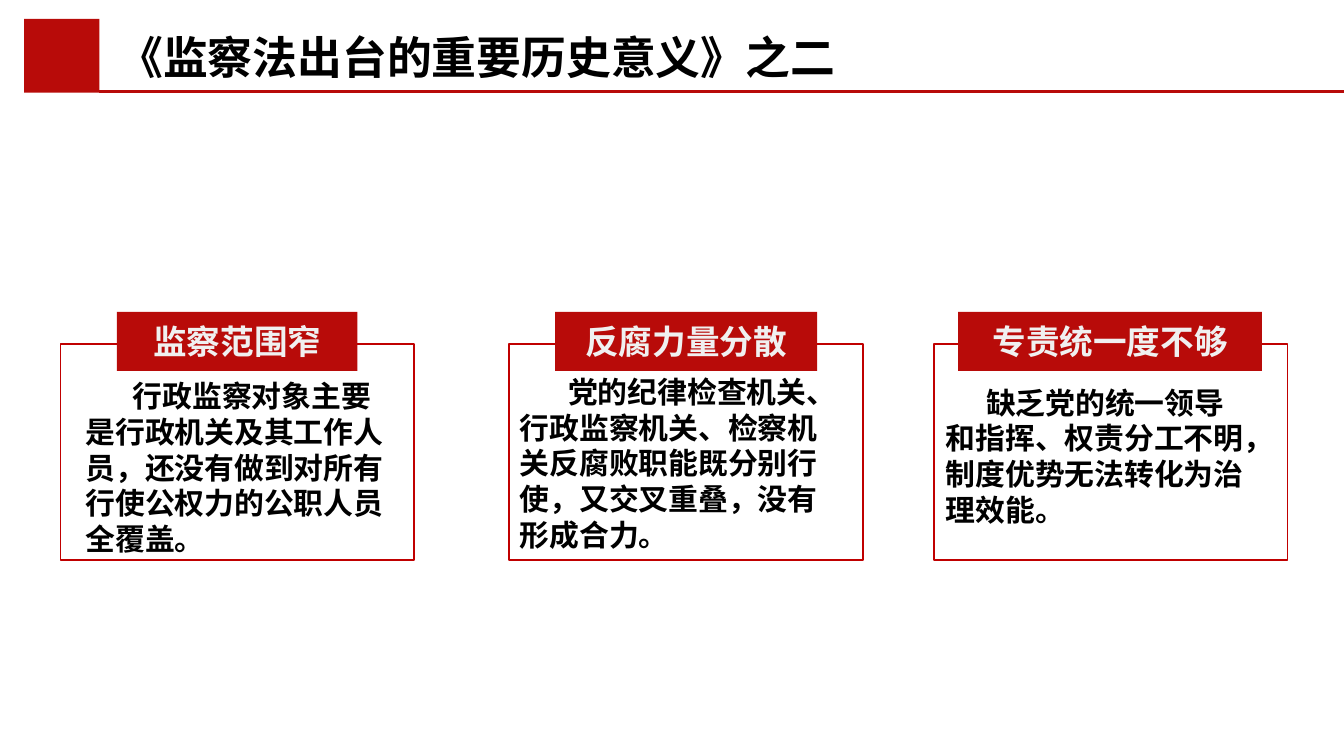
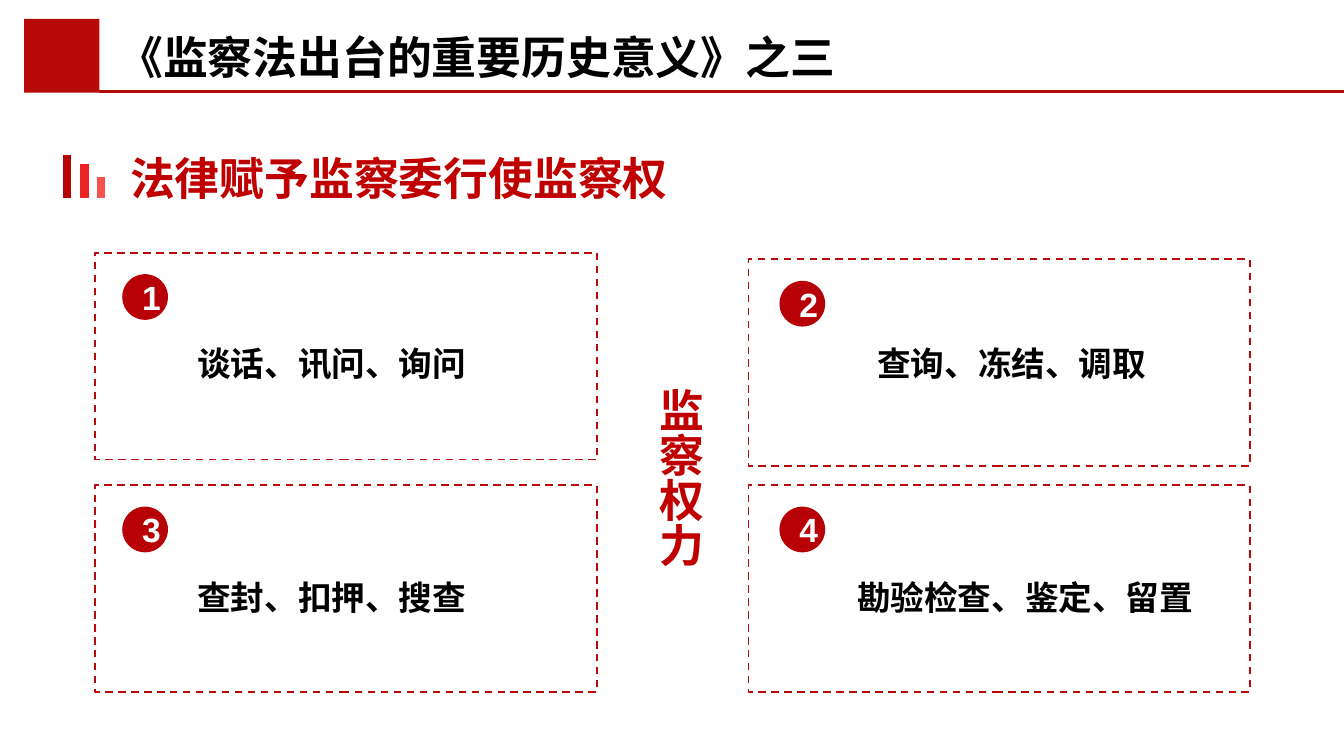
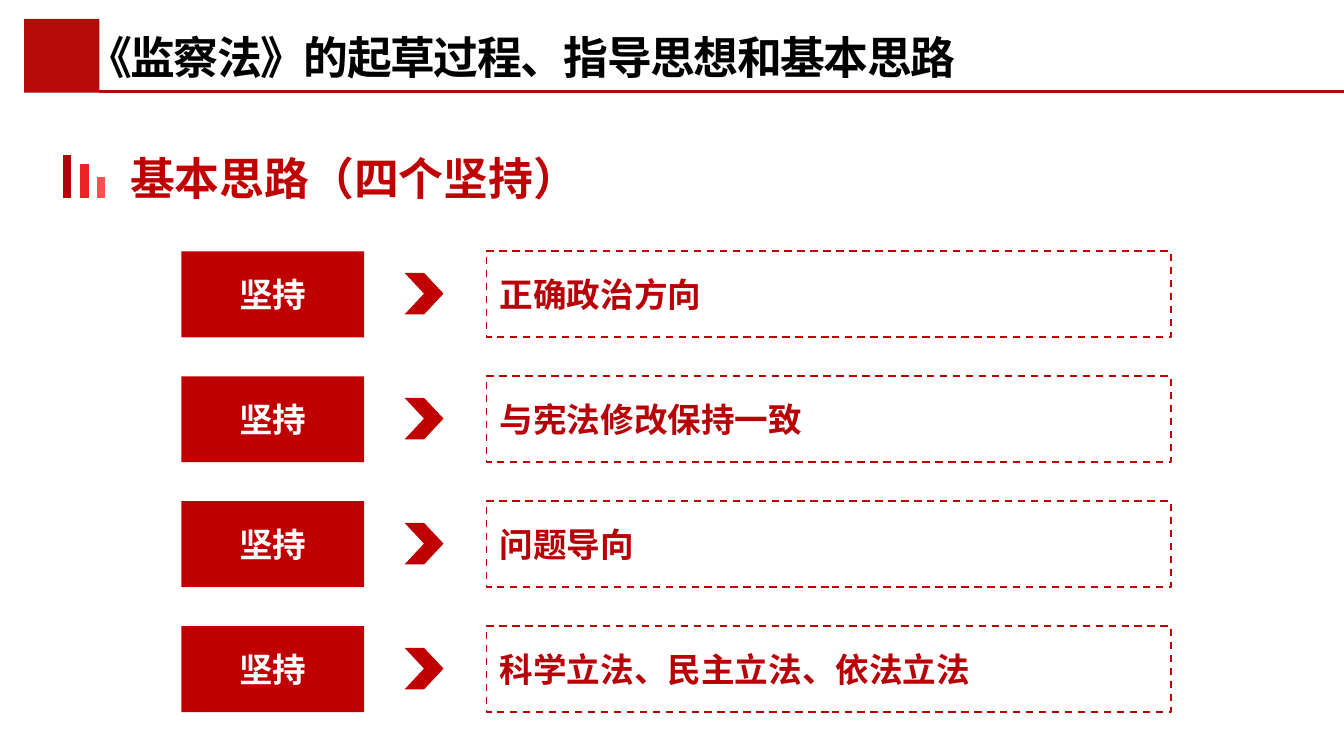
from pptx import Presentation
from pptx.dml.color import RGBColor
from pptx.enum.dml import MSO_LINE_DASH_STYLE as Dash
from pptx.enum.shapes import MSO_CONNECTOR, MSO_SHAPE as Shape
from pptx.enum.text import MSO_ANCHOR as Anchor, MSO_AUTO_SIZE as AutoSize, PP_ALIGN as Align
from pptx.oxml.ns import qn
from pptx.util import Inches, Pt

BAND_RED = RGBColor(0xB8, 0x0B, 0x09)
DEEP_RED = RGBColor(0xB8, 0x01, 0x06)
MID_RED = RGBColor(0xEE, 0x22, 0x22)
LIGHT_RED = RGBColor(0xF6, 0x50, 0x50)
ACCENT_RED = RGBColor(0xC0, 0x00, 0x00)
BLACK = RGBColor(0, 0, 0)
WHITE = RGBColor(0xFF, 0xFF, 0xFF)
PALE = RGBColor(0xF0, 0xF0, 0xF0)
CJK_FONT = "Noto Sans CJK SC"
LATIN_FONT = "Arial"

CARDS = [
    # frame left, label left, label width, body left, body top, indent
    ("监察范围窄",
     "行政监察对象主要是行政机关及其工作人员，还没有做到对所有行使公权力的公职人员全覆盖。",
     0.45, 0.87, 1.79, 0.46, 2.76, 0.35),
    ("反腐力量分散",
     "党的纪律检查机关、行政监察机关、检察机关反腐败职能既分别行使，又交叉重叠，没有形成合力。",
     3.79, 4.13, 1.95, 3.69, 2.73, 0.36),
    ("专责统一度不够",
     "缺乏党的统一领导和指挥、权责分工不明，制度优势无法转化为治理效能。",
     6.95, 7.13, 2.26, 6.86, 2.81, 0.3),
]
POWERS = [
    # frame left and top, circle offset, text left and top
    ("谈话、讯问、询问", 0.71, 1.88, 0.2, 1.37, 2.5),
    ("查询、冻结、调取", 5.57, 1.93, 0.23, 6.43, 2.5),
    ("查封、扣押、搜查", 0.71, 3.61, 0.2, 1.37, 4.24),
    ("勘验检查、鉴定、留置", 5.57, 3.61, 0.23, 6.28, 4.24),
]
PRINCIPLES = ["正确政治方向", "与宪法修改保持一致", "问题导向", "科学立法、民主立法、依法立法"]


def write(frame, text, size, color, align=Align.LEFT, font=CJK_FONT):
    """Write one bold paragraph and return it."""
    paragraph = frame.paragraphs[0]
    paragraph.alignment = align
    run = paragraph.add_run()
    run.text = text
    run.font.size = Pt(size)
    run.font.bold = True
    run.font.name = font
    run.font.color.rgb = color
    if font == CJK_FONT:
        paragraph.line_spacing = Pt(size * 1.2)
        latin = run.font._element.find(qn("a:latin"))
        east_asian = latin.makeelement(qn("a:ea"), {"typeface": font})
        latin.addnext(east_asian)
    return paragraph


def add_text(slide, text, left, top, width, height, size, color):
    box = slide.shapes.add_textbox(Inches(left), Inches(top), Inches(width), Inches(height))
    box.text_frame.word_wrap = True
    write(box.text_frame, text, size, color)
    return box


def add_block(slide, kind, left, top, width, height, fill=None, line=None, dashed=False):
    block = slide.shapes.add_shape(kind, Inches(left), Inches(top), Inches(width), Inches(height))
    block.shadow.inherit = False
    if fill is None:
        block.fill.background()
    else:
        block.fill.solid()
        block.fill.fore_color.rgb = fill
    if line is None:
        block.line.fill.background()
    else:
        block.line.color.rgb = line
        block.line.width = Pt(1)
        if dashed:
            block.line.dash_style = Dash.DASH
    block.text_frame.vertical_anchor = Anchor.MIDDLE
    return block


def add_line(slide, x1, y1, x2, y2, color, weight):
    line = slide.shapes.add_connector(
        MSO_CONNECTOR.STRAIGHT, Inches(x1), Inches(y1), Inches(x2), Inches(y2))
    line.line.color.rgb = color
    line.line.width = Pt(weight)
    properties = line.element.spPr
    properties.append(properties.makeelement(qn("a:effectLst"), {}))
    return line


def move_header_to_layout(slide):
    """Draw the red header band once, on the layout that all slides share."""
    square = add_block(slide, Shape.RECTANGLE, 0.18, 0.14, 0.56, 0.55, BAND_RED)
    rule = add_line(slide, 0.74, 0.68, 10, 0.68, BAND_RED, 1.5)
    for part in (rule, square):
        slide.slide_layout.shapes.element.insert(2, part.element)


def add_title(slide, text, left=0.78, width=5.59, inset=0.1, spacing=None):
    title = slide.shapes.title
    title.left, title.top = Inches(left), Inches(0.17)
    title.width, title.height = Inches(width), Inches(0.5)
    frame = title.text_frame
    frame.auto_size = AutoSize.NONE
    frame.word_wrap = True
    frame.vertical_anchor = Anchor.TOP
    frame.margin_left = Inches(inset)
    paragraph = write(frame, text, 24, BLACK)
    if spacing is not None:
        paragraph.runs[0].font._element.set("spc", str(round(spacing * 100)))


def add_subtitle(slide, text, width):
    add_text(slide, text, 0.87, 1.07, width, 0.5, 24, ACCENT_RED)
    for x, top, color in ((0.5, 1.15, DEEP_RED), (0.63, 1.22, MID_RED), (0.75, 1.32, LIGHT_RED)):
        add_line(slide, x, 1.47, x, top, color, 4.5)


def add_card(slide, heading, body, frame_left, label_left, label_width,
             body_left, body_top, indent):
    add_block(slide, Shape.RECTANGLE, frame_left, 2.56, 2.63, 1.61, WHITE, ACCENT_RED)
    label = add_block(slide, Shape.RECTANGLE, label_left, 2.32, label_width, 0.44, BAND_RED)
    write(label.text_frame, heading, 18, PALE, Align.CENTER)
    text = add_text(slide, body, body_left, body_top, 2.53, 1.45, 16, BLACK)
    properties = text.text_frame.paragraphs[0]._p.get_or_add_pPr()
    properties.set("marL", str(Inches(0.08)))
    properties.set("indent", str(Inches(indent)))


def add_power(slide, number, text, left, top, circle_offset, text_left, text_top):
    add_block(slide, Shape.RECTANGLE, left, top, 3.73, 1.54, line=BAND_RED, dashed=True)
    circle = add_block(slide, Shape.OVAL, left + circle_offset, top + 0.16, 0.34, 0.34, DEEP_RED)
    write(circle.text_frame, str(number), 18, WHITE, Align.CENTER, LATIN_FONT)
    add_text(slide, text, text_left, text_top, 2.7, 0.4, 18, BLACK)


def add_vertical_heading(slide, text):
    heading = add_text(slide, text, 4.7, 2.79, 0.61, 1.45, 24, ACCENT_RED)
    heading.text_frame.margin_bottom = 0
    heading.element.txBody.find(qn("a:bodyPr")).set("vert", "eaVert")


def add_principle(slide, text, top):
    keep = add_block(slide, Shape.RECTANGLE, 1.35, top, 1.36, 0.64, ACCENT_RED)
    write(keep.text_frame, "坚持", 18, WHITE, Align.CENTER)
    add_block(slide, Shape.CHEVRON, 3.01, top + 0.16, 0.29, 0.31, ACCENT_RED)
    principle = add_block(slide, Shape.RECTANGLE, 3.62, top, 5.09, 0.64,
                          line=ACCENT_RED, dashed=True)
    write(principle.text_frame, text, 18, DEEP_RED)


def main():
    deck = Presentation()
    deck.slide_width = Inches(10)
    deck.slide_height = Inches(10 * 9 / 16)
    title_only = deck.slide_layouts[5]
    shortcomings, powers, approach = (deck.slides.add_slide(title_only) for _ in range(3))
    move_header_to_layout(shortcomings)

    add_title(shortcomings, "《监察法出台的重要历史意义》之二")
    for card in CARDS:
        add_card(shortcomings, *card)

    add_title(powers, "《监察法出台的重要历史意义》之三")
    add_subtitle(powers, "法律赋予监察委行使监察权", 4.24)
    for number, power in enumerate(POWERS, 1):
        add_power(powers, number, *power)
    add_vertical_heading(powers, "监察权力")

    add_title(approach, "《监察法》的起草过程、指导思想和基本思路",
              left=0.28, width=6.98, inset=0.37, spacing=-0.8)
    add_subtitle(approach, "基本思路（四个坚持）", 3.57)
    for row, principle in enumerate(PRINCIPLES):
        add_principle(approach, principle, 1.87 + 0.93 * row)

    deck.save("out.pptx")


if __name__ == "__main__":
    main()
